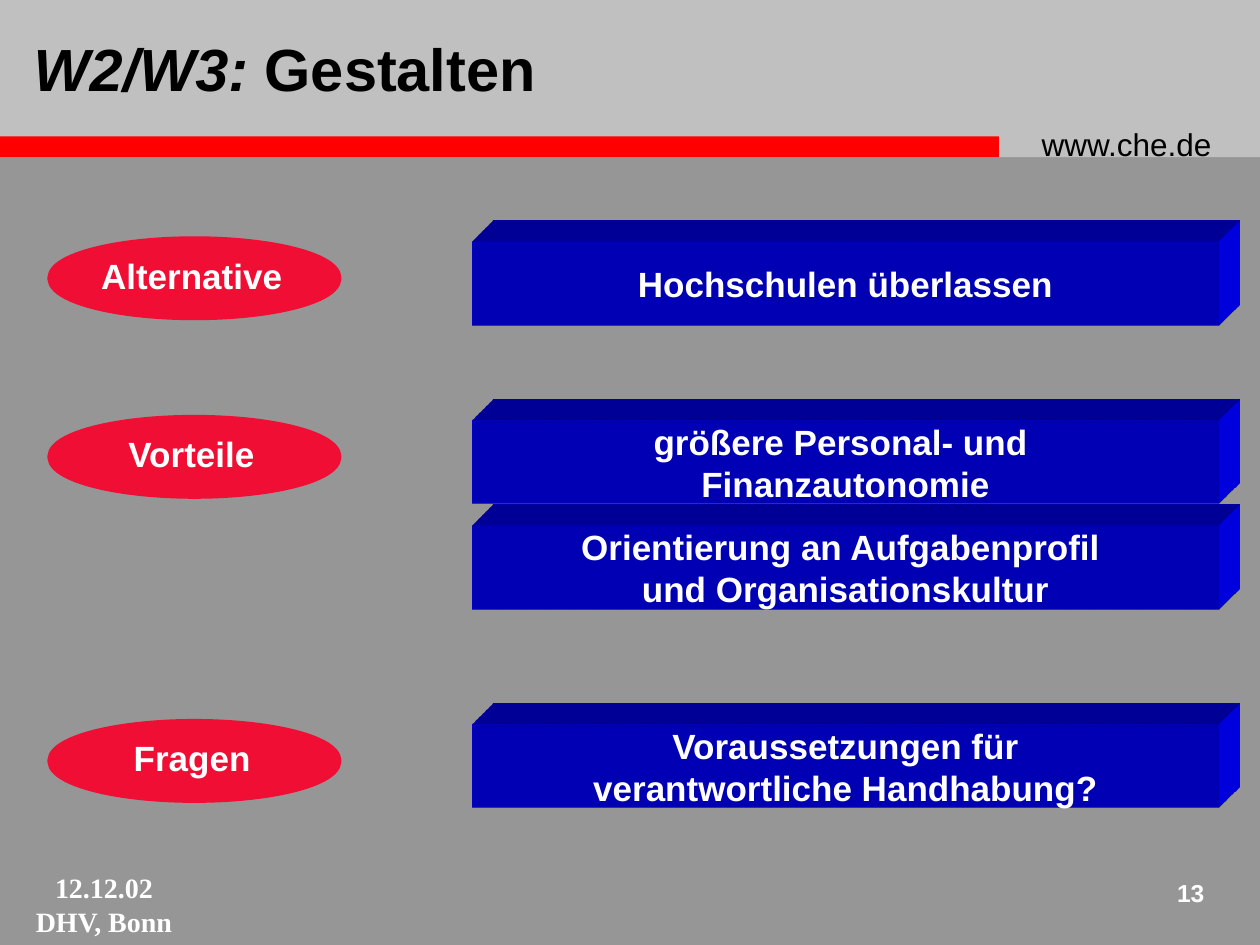
import pptx
import pptx.dml.color
import pptx.enum.shapes
import pptx.enum.text
import pptx.oxml
import pptx.util
from pptx.util import Cm

COLORS = {
    "background": "969696",
    "header": "C0C0C0",
    "stripe": "FF0000",
    "block": "0000FF",
    "oval": "F00E34",
    "dark": "000000",
    "light": "FFFFFF",
}
SHAPE = pptx.enum.shapes.MSO_SHAPE
ALIGN = pptx.enum.text.PP_ALIGN
ANCHOR = pptx.enum.text.MSO_ANCHOR
A_NS = 'xmlns:a="http://schemas.openxmlformats.org/drawingml/2006/main"'


def rgb(name):
    return pptx.dml.color.RGBColor.from_string(COLORS[name])


def add_run(p, text, size, color, font="Arial", bold=True, italic=False):
    r = p.add_run()
    r.text = text
    r.font.name = font
    r.font.size = pptx.util.Pt(size)
    r.font.bold = bold
    r.font.italic = italic
    r.font.color.rgb = rgb(color)


def fill_lines(tf, lines, size, color, align, **style):
    """Write each line as a paragraph of its own."""
    for i, line in enumerate(lines):
        p = tf.paragraphs[0] if i == 0 else tf.add_paragraph()
        p.alignment = align
        add_run(p, line, size, color, **style)


def add_text_frame(shapes, box, anchor=ANCHOR.TOP, wrap=True):
    tf = shapes.add_textbox(*map(Cm, box)).text_frame
    tf.word_wrap = wrap
    tf.vertical_anchor = anchor
    return tf


def add_solid(shapes, kind, box, color):
    sp = shapes.add_shape(kind, *map(Cm, box))
    sp.shadow.inherit = False
    sp.fill.solid()
    sp.fill.fore_color.rgb = rgb(color)
    sp.line.fill.background()
    return sp


def extrude(sp, color):
    """Give a shape depth towards the upper right."""
    for xml in (
        f'<a:scene3d {A_NS}><a:camera prst="legacyObliqueTopRight"/>'
        '<a:lightRig rig="legacyFlat3" dir="b"/></a:scene3d>',
        f'<a:sp3d {A_NS} extrusionH="430200" prstMaterial="legacyMatrix">'
        '<a:bevelT w="13500" h="13500" prst="angle"/>'
        '<a:bevelB w="13500" h="13500" prst="angle"/>'
        f'<a:extrusionClr><a:srgbClr val="{COLORS[color]}"/></a:extrusionClr></a:sp3d>',
    ):
        sp._element.spPr.append(pptx.oxml.parse_xml(xml))


def add_block(s, top, lines):
    sp = add_solid(s.shapes, SHAPE.RECTANGLE, (9.53, top, 15.03, 1.69), "block")
    extrude(sp, "block")
    tf = sp.text_frame
    tf.word_wrap = False
    tf.vertical_anchor = ANCHOR.MIDDLE
    fill_lines(tf, lines, 20, "light", ALIGN.CENTER)


def add_oval_label(s, top, text, left, width):
    shapes = s.shapes.add_group_shape().shapes
    sp = add_solid(shapes, SHAPE.OVAL, (1.06, top, 5.72, 1.48), "oval")
    sp.line.color.rgb = rgb("oval")
    sp.line.width = pptx.util.Pt(6)
    tf = add_text_frame(shapes, (left, top + 0.13, width, 1.09), ANCHOR.MIDDLE, wrap=False)
    fill_lines(tf, [text], 20, "light", ALIGN.CENTER)


def add_header(s):
    add_solid(s.shapes, SHAPE.RECTANGLE, (0, 0, 25.4, 3.17), "header")
    add_solid(s.shapes, SHAPE.RECTANGLE, (0, 2.75, 20.14, 0.42), "stripe")
    tf = add_text_frame(s.shapes, (20.75, 2.39, 4.45, 1.02))
    fill_lines(tf, ["www.che.de"], 18, "dark", ALIGN.LEFT, bold=False)
    tf = add_text_frame(s.shapes, (0.43, 0, 19.48, 2.75), ANCHOR.MIDDLE)
    p = tf.paragraphs[0]
    add_run(p, "W2/W3:", 34, "dark", italic=True)
    add_run(p, " Gestalten", 34, "dark")


def add_footer(s):
    tf = add_text_frame(s.shapes, (0.43, 17.42, 3.33, 1.63), ANCHOR.MIDDLE, wrap=False)
    fill_lines(tf, ["12.12.02", "DHV, Bonn"], 16, "light", ALIGN.CENTER, font="Times New Roman")
    tf = add_text_frame(s.shapes, (23.06, 17.58, 1.47, 1.07))
    fill_lines(tf, ["13"], 14, "light", ALIGN.RIGHT)


def main():
    prs = pptx.Presentation()
    prs.slide_width, prs.slide_height = Cm(25.4), Cm(19.05)
    s = prs.slides.add_slide(prs.slide_layouts[6])
    s.background.fill.solid()
    s.background.fill.fore_color.rgb = rgb("background")
    add_header(s)
    add_footer(s)

    alternative, advantages, questions = 4.87, 8.47, 14.6
    # The lower advantage comes first so that the upper one overlaps its depth.
    for top, lines in (
        (alternative, ["Hochschulen überlassen"]),
        (advantages + 2.12, ["Orientierung an Aufgabenprofil ", "und Organisationskultur"]),
        (advantages, ["größere Personal- und ", "Finanzautonomie"]),
        (questions, ["Voraussetzungen für", "verantwortliche Handhabung?"]),
    ):
        add_block(s, top, lines)
    for top, text, left, width in (
        (alternative, "Alternative", 1.78, 4.17),
        (advantages, "Vorteile", 2.31, 3.1),
        (questions, "Fragen", 2.44, 2.87),
    ):
        add_oval_label(s, top, text, left, width)
    prs.save("out.pptx")


if __name__ == "__main__":
    main()
